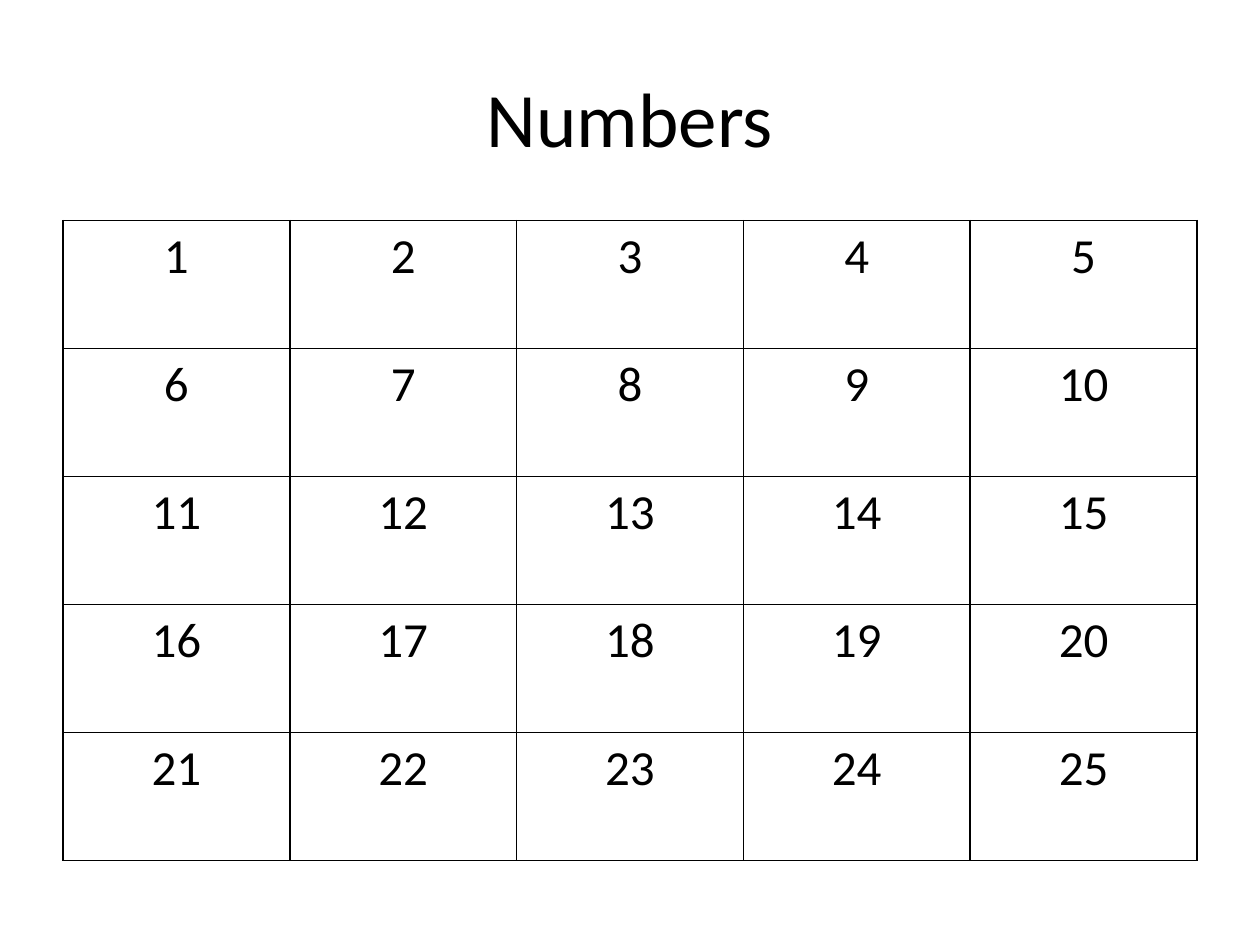
from dataclasses import dataclass

from lxml import etree
from pptx import Presentation
from pptx.dml.color import RGBColor
from pptx.enum.text import MSO_ANCHOR, PP_ALIGN
from pptx.oxml.ns import qn
from pptx.util import Emu, Pt

CENTER = PP_ALIGN.CENTER
MIDDLE = MSO_ANCHOR.MIDDLE
TITLE_ONLY = 5
EMU_PER_PX = 9144  # 100 px to the inch


@dataclass(frozen=True)
class Theme:
    font: str = "Calibri"
    ink: str = "000000"
    title_size: int = 44
    number_size: int = 28
    border_width: int = 1


@dataclass(frozen=True)
class Area:
    left: int
    top: int
    width: int
    height: int

    def emu(self) -> tuple[Emu, ...]:
        return tuple(px(n) for n in (self.left, self.top, self.width, self.height))


THEME = Theme()
TITLE_AREA = Area(50, 30, 900, 125)
GRID_AREA = Area(50, 175, 900, 508)
GRID_SIZE = 5


def px(length: int) -> Emu:
    return Emu(length * EMU_PER_PX)


def write_text(text_frame, text: str, size: int) -> None:
    text_frame.text = text
    paragraph = text_frame.paragraphs[0]
    paragraph.alignment = CENTER
    font = paragraph.runs[0].font
    font.name = THEME.font
    font.size = Pt(size)
    font.bold = False
    font.color.rgb = RGBColor.from_string(THEME.ink)


def add_borders(cell) -> None:
    properties = cell._tc.get_or_add_tcPr()
    # Border lines must come before the cell's fill
    for position, side in enumerate(("lnL", "lnR", "lnT", "lnB")):
        line = etree.Element(qn(f"a:{side}"), w=str(Pt(THEME.border_width)))
        fill = etree.SubElement(line, qn("a:solidFill"))
        etree.SubElement(fill, qn("a:srgbClr"), val=THEME.ink)
        properties.insert(position, line)


def add_title(page, text: str) -> None:
    title = page.shapes.title
    title.left, title.top, title.width, title.height = TITLE_AREA.emu()
    title.text_frame.vertical_anchor = MIDDLE
    write_text(title.text_frame, text, THEME.title_size)


def add_number_grid(page, area: Area, size: int) -> None:
    table = page.shapes.add_table(size, size, *area.emu()).table
    table.first_row = False
    table.horz_banding = False
    for number, cell in enumerate(table.iter_cells(), start=1):
        cell.fill.background()
        add_borders(cell)
        write_text(cell.text_frame, str(number), THEME.number_size)


def main() -> None:
    deck = Presentation()
    deck.slide_width, deck.slide_height = px(1000), px(750)
    page = deck.slides.add_slide(deck.slide_layouts[TITLE_ONLY])

    # Heading
    add_title(page, "Numbers")

    # Numbers 1 to 25, row by row
    add_number_grid(page, GRID_AREA, GRID_SIZE)

    deck.save("out.pptx")


if __name__ == "__main__":
    main()
